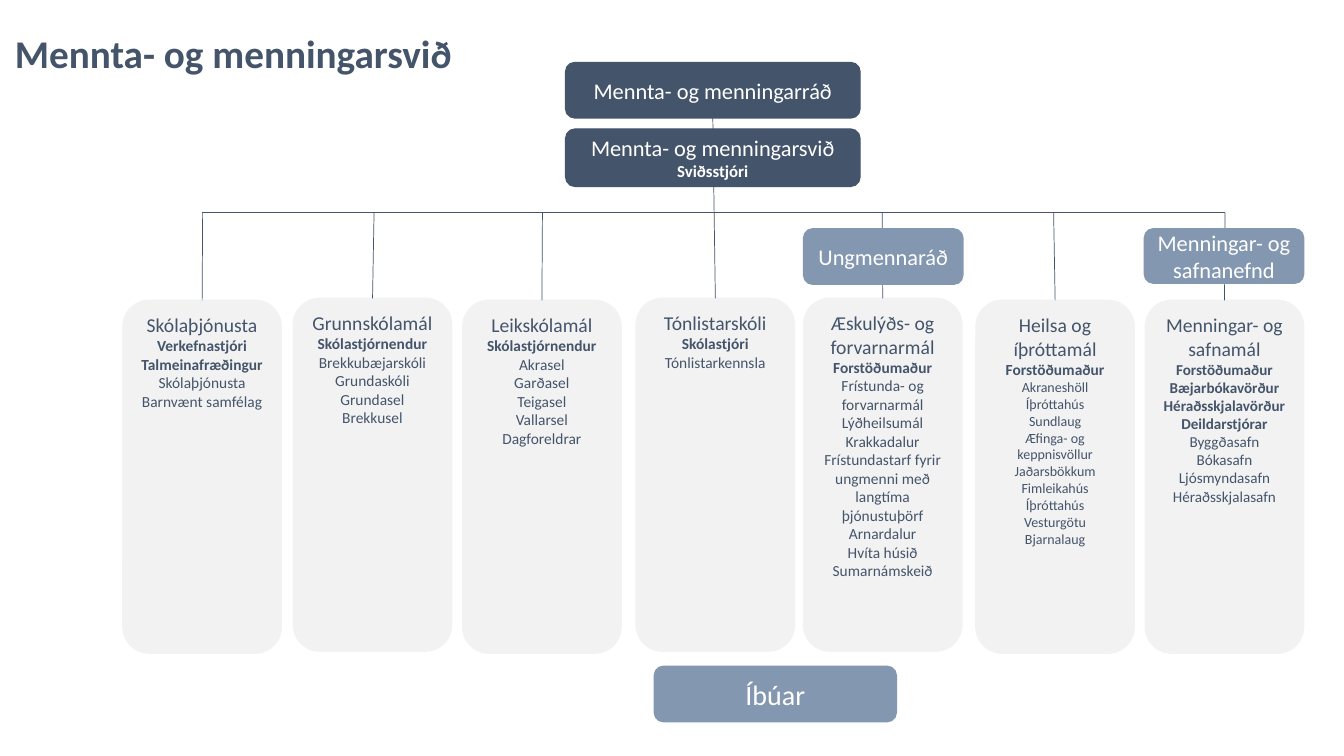
from dataclasses import dataclass

from lxml import etree
from pptx import Presentation
from pptx.dml.color import RGBColor
from pptx.enum.shapes import MSO_CONNECTOR, MSO_SHAPE
from pptx.enum.text import MSO_ANCHOR, PP_ALIGN
from pptx.oxml.ns import qn
from pptx.shapes.autoshape import Shape
from pptx.shapes.connector import Connector
from pptx.slide import Slide
from pptx.text.text import TextFrame
from pptx.util import Emu, Pt

ROUND = MSO_SHAPE.ROUNDED_RECTANGLE
RECT = MSO_SHAPE.RECTANGLE
LINE = MSO_CONNECTOR.STRAIGHT
TOP, MIDDLE = MSO_ANCHOR.TOP, MSO_ANCHOR.MIDDLE
LEFT, CENTER = PP_ALIGN.LEFT, PP_ALIGN.CENTER

SCALE = 9144
FONT = "Calibri"
NAVY, BLUE, GREY, WHITE = "44546A", "8497B0", "F2F2F2", "FFFFFF"
RAIL = 211
WIDE, TALL = 157, 350


@dataclass
class Box:
    left: int
    top: int
    width: int
    height: int
    fill: str
    text: str
    size: int = 16
    note: str = ""


@dataclass
class Column:
    left: int
    top: int
    drop: int
    head: str
    roles: list[str]
    units: list[str]
    role_size: float = 11
    unit_size: float = 11


COUNCIL = Box(561, 62, 292, 55, NAVY, "Mennta- og menningarráð")

BOXES = [
    Box(561, 128, 292, 57, NAVY, "Mennta- og menningarsvið", note="Sviðsstjóri"),
    Box(797, 227, 158, 55, BLUE, "Ungmennaráð"),
    Box(1135, 227, 158, 54, BLUE, "Menningar- og safnanefnd"),
    Box(649, 661, 240, 55, BLUE, "Íbúar", 20),
]

COLUMNS = [
    Column(122, 298, 201, "Skólaþjónusta", ["Verkefnastjóri", "Talmeinafræðingur"],
           ["Skólaþjónusta", "Barnvænt samfélag"]),
    Column(291, 296, 371, "Grunnskólamál", ["Skólastjórnendur"],
           ["Brekkubæjarskóli", "Grundaskóli", "Grundasel", "Brekkusel"]),
    Column(459, 298, 538, "Leikskólamál", ["Skólastjórnendur"],
           ["Akrasel", "Garðasel", "Teigasel", "Vallarsel", "Dagforeldrar"]),
    Column(631, 296, 0, "Tónlistarskóli", ["Skólastjóri"], ["Tónlistarkennsla"]),
    Column(797, 296, 875, "Æskulýðs- og forvarnarmál", ["Forstöðumaður"],
           ["Frístunda- og forvarnarmál", "Lýðheilsumál", "Krakkadalur",
            "Frístundastarf fyrir ungmenni með langtíma þjónustuþörf",
            "Arnardalur", "Hvíta húsið", "Sumarnámskeið"]),
    Column(968, 298, 1045, "Heilsa og íþróttamál", ["Forstöðumaður"],
           ["Akraneshöll", "Íþróttahús", "Sundlaug",
            "Æfinga- og keppnisvöllur Jaðarsbökkum Fimleikahús Íþróttahús Vesturgötu",
            "Bjarnalaug"], unit_size=10),
    Column(1136, 298, 1215, "Menningar- og safnamál",
           ["Forstöðumaður", "Bæjarbókavörður", "Héraðsskjalavörður", "Deildarstjórar"],
           ["Byggðasafn", "Bókasafn", "Ljósmyndasafn", "Héraðsskjalasafn"], 10.8, 10.8),
]


def px(count: int) -> Emu:
    return Emu(count * SCALE)


def tint(code: str) -> RGBColor:
    return RGBColor.from_string(code)


def write(frame: TextFrame, text: str, *, size: float, color: str = NAVY,
          bold: bool = False, align: PP_ALIGN = CENTER) -> None:
    last = frame.paragraphs[-1]
    para = frame.add_paragraph() if last.runs else last
    para.alignment = align
    run = para.add_run()
    run.text = text
    run.font.name = FONT
    run.font.size = Pt(size)
    run.font.bold = bold
    run.font.color.rgb = tint(color)


def panel(slide: Slide, left: int, top: int, width: int, height: int, fill: str,
          kind: MSO_SHAPE = ROUND, anchor: MSO_ANCHOR = MIDDLE) -> Shape:
    shape = slide.shapes.add_shape(kind, px(left), px(top), px(width), px(height))
    shape.shadow.inherit = False
    shape.fill.solid()
    shape.fill.fore_color.rgb = tint(fill)
    shape.line.color.rgb = tint(fill)
    shape.line.width = Pt(1)
    shape.text_frame.word_wrap = True
    shape.text_frame.vertical_anchor = anchor
    return shape


def draw_box(slide: Slide, box: Box) -> Shape:
    shape = panel(slide, box.left, box.top, box.width, box.height, box.fill)
    write(shape.text_frame, box.text, size=box.size, color=WHITE)
    if box.note:
        write(shape.text_frame, box.note, size=12, color=WHITE, bold=True)
    return shape


def draw_column(slide: Slide, col: Column) -> Shape:
    shape = panel(slide, col.left, col.top, WIDE, TALL, GREY, anchor=TOP)
    write(shape.text_frame, col.head, size=14)
    for role in col.roles:
        write(shape.text_frame, role, size=col.role_size, bold=True)
    for unit in col.units:
        write(shape.text_frame, unit, size=col.unit_size)
    return shape


def link(slide: Slide, start: int, end: int) -> Connector:
    line = slide.shapes.add_connector(LINE, px(start), px(RAIL), px(end), px(RAIL))
    line.line.color.rgb = tint(NAVY)
    line.line.width = Pt(0.5)
    etree.SubElement(line._element.spPr, qn("a:effectLst"))
    return line


def main() -> None:
    deck = Presentation()
    deck.slide_width, deck.slide_height = px(1333), px(750)
    slide = deck.slides.add_slide(deck.slide_layouts[6])

    title = panel(slide, 5, 2, 476, 100, WHITE, RECT)
    title.line.fill.background()
    write(title.text_frame, "Mennta- og menningarsvið", size=28, bold=True, align=LEFT)

    council = draw_box(slide, COUNCIL)
    link(slide, 1215, 200)
    for col in COLUMNS:
        shape = draw_column(slide, col)
        line = link(slide, col.drop, col.drop)
        if not col.drop:
            line.begin_connect(council, 2)
        line.end_connect(shape, 0)
    for box in BOXES:
        draw_box(slide, box)

    deck.save("out.pptx")


if __name__ == "__main__":
    main()
